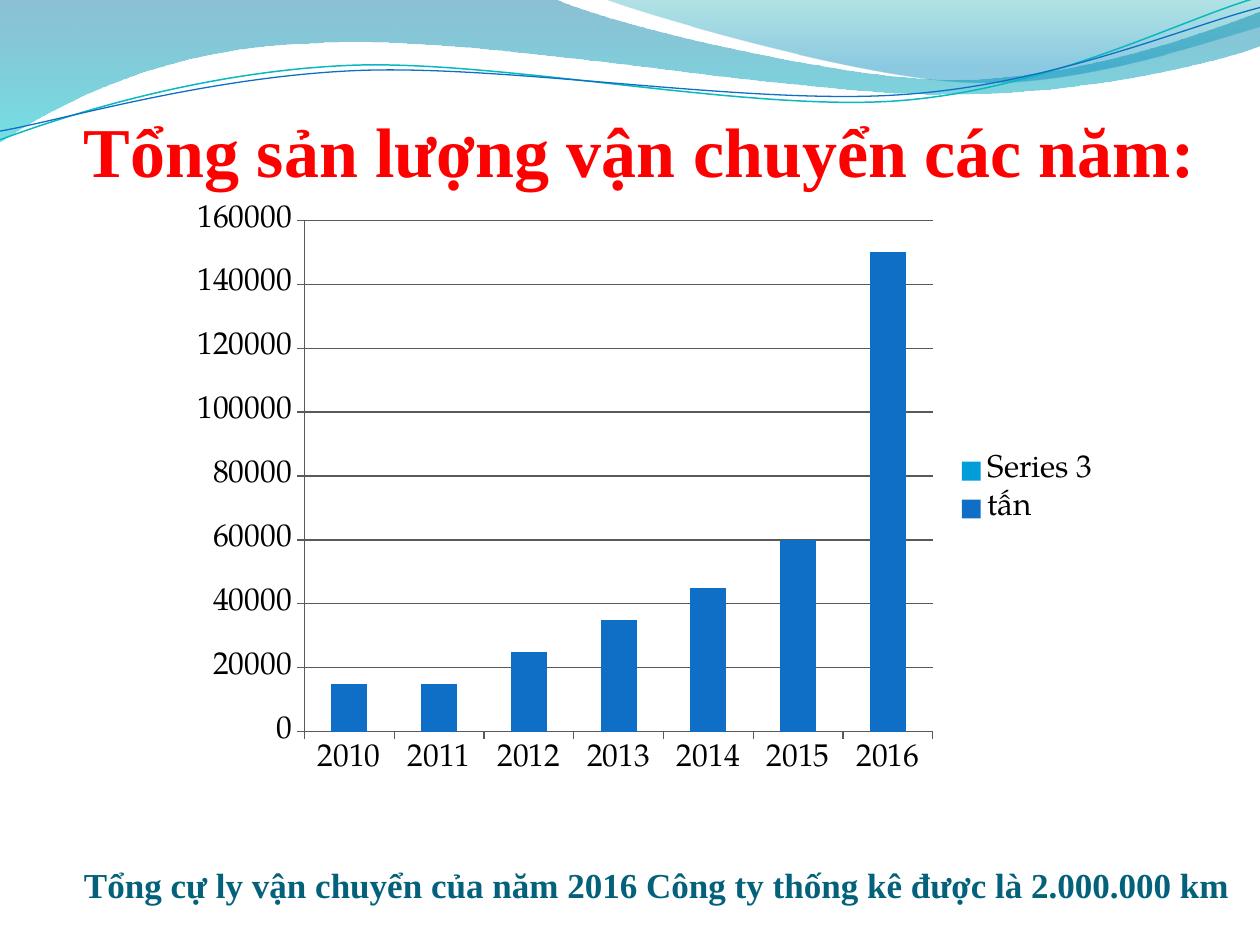
from pptx import Presentation
from pptx.chart.data import CategoryChartData
from pptx.dml.color import RGBColor
from pptx.enum.chart import XL_CHART_TYPE as ChartType, XL_LEGEND_POSITION as LegendPosition, XL_TICK_MARK as TickMark
from pptx.enum.text import MSO_ANCHOR as Anchor, MSO_AUTO_SIZE as AutoSize, PP_ALIGN as Align
from pptx.oxml import parse_xml
from pptx.oxml.ns import nsdecls, qn
from pptx.util import Pt

COLORS = {
    "title": "FF0000", "note": "04617B", "text": "000000", "grid": "595959",
    "tons": "0F6FC6", "other": "009DD9", "teal_line": "0AB8BF", "blue_line": "0F6FC6",
    "back_top": "0074A1", "back_bottom": "00C6CF", "front_top": "00A1A9", "front_bottom": "008BBF",
}
TITLE_FONT = "Times New Roman"
CHART_FONT = "TeX Gyre Pagella"

BACK_WAVE = [
    (0, 0), (316.8, -0.7), (342.7, 12.2, 478.1, 45.4, 545.8, 45.4),
    (614.2, 45.4, 689.8, 18.7, 720, 6.5), (720.7, 25.9),
    (707.8, 31.7, 626.4, 54.7, 537.1, 54), (447.8, 54, 275, 20.2, 185, 24.5),
    (92.9, 25.9, 33.1, 59.8, -0.7, 81.4),
]
FRONT_WAVE = [
    (344.9, -0.7), (366.5, 7.9, 491, 44.6, 553.7, 46.8),
    (616.3, 49.7, 691.9, 23, 720, 15.1), (720, 0),
]
TEAL_CURVE = [
    (0, 79.9), (34.6, 67, 113.8, 41, 199.4, 37.4),
    (284.4, 33.8, 427, 64.1, 513.4, 57.6), (599.8, 51.1, 675.4, 10.8, 718.6, -1.4),
]
BLUE_CURVE = [
    (0, 74.9), (33.8, 69.1, 118.1, 43.9, 203.8, 40.3),
    (290.2, 36.7, 429.8, 60.5, 516.2, 54), (601.9, 48.2, 677.5, 15.1, 720, 4.3),
]


def rgb(name):
    """Return the named colour."""
    return RGBColor.from_string(COLORS[name])


def add_outline(slide, segments, closed):
    """Add a freeform of straight (two numbers) and cubic (six numbers) segments."""
    points = [tuple(map(Pt, segment[-2:])) for segment in segments]
    builder = slide.shapes.build_freeform(*points[0])
    builder.add_line_segments(points[1:], close=closed)
    shape = builder.convert_to_shape()
    shape.shadow.inherit = False
    lines = list(shape.element.iter(qn("a:lnTo")))
    for line, segment in zip(lines, segments[1:]):
        if len(segment) == 6:
            corners = "".join(
                f'<a:pt x="{Pt(x) - shape.left}" y="{Pt(y) - shape.top}"/>'
                for x, y in zip(segment[::2], segment[1::2])
            )
            curve = parse_xml(f'<a:cubicBezTo {nsdecls("a")}>{corners}</a:cubicBezTo>')
            line.getparent().replace(line, curve)
    return shape


def add_wave(slide, segments, stops):
    """Add a wave with a translucent vertical gradient of (position, colour, opacity) stops."""
    shape = add_outline(slide, segments, True)
    shape.line.fill.background()
    stop_xml = "".join(
        f'<a:gs pos="{position * 1000}"><a:srgbClr val="{COLORS[color]}">'
        f'<a:alpha val="{opacity * 1000}"/></a:srgbClr></a:gs>'
        for position, color, opacity in stops
    )
    gradient = parse_xml(
        f'<a:gradFill {nsdecls("a")}><a:gsLst>{stop_xml}</a:gsLst>'
        '<a:lin ang="5400000" scaled="0"/></a:gradFill>'
    )
    shape.element.spPr.find(qn("a:custGeom")).addnext(gradient)


def add_curve(slide, segments, color, width):
    """Add an open curved line."""
    shape = add_outline(slide, segments, False)
    shape.fill.background()
    shape.line.color.rgb = rgb(color)
    shape.line.width = Pt(width)


def write_text(shape, box, text, size, color):
    """Place a shape and give it one bold bottom-anchored line of text."""
    shape.left, shape.top, shape.width, shape.height = map(Pt, box)
    frame = shape.text_frame
    frame.text = text
    frame.word_wrap = True
    frame.auto_size = AutoSize.NONE
    frame.vertical_anchor = Anchor.BOTTOM
    frame.margin_left = frame.margin_right = frame.margin_bottom = 0
    frame.margin_top = Pt(3.6)
    paragraph = frame.paragraphs[0]
    paragraph.alignment = Align.LEFT
    font = paragraph.font
    font.name, font.size, font.bold = TITLE_FONT, Pt(size), True
    font.color.rgb = rgb(color)


def add_tonnage_chart(slide):
    """Add the stacked column chart of yearly tonnage."""
    data = CategoryChartData()
    data.categories = [str(year) for year in range(2010, 2017)]
    data.add_series("tấn", (15000, 15000, 25000, 35000, 45000, 60000, 150000))
    data.add_series("Series 3", (0, 0, 0, 0, None, None, None))
    box = map(Pt, (102.2, 110.2, 534.2, 339.8))
    chart = slide.shapes.add_chart(ChartType.COLUMN_STACKED, *box, data).chart
    chart.has_title = False
    chart.font.name, chart.font.size = CHART_FONT, Pt(18)
    chart.font.color.rgb = rgb("text")
    chart.has_legend = True
    chart.legend.position = LegendPosition.RIGHT
    chart.legend.include_in_layout = False
    plot = chart.plots[0]
    plot.gap_width, plot.overlap, plot.vary_by_categories = 150, 100, False
    for series, color in zip(plot.series, ("tons", "other")):
        series.format.fill.solid()
        series.format.fill.fore_color.rgb = rgb(color)
    chart.value_axis.has_major_gridlines = True
    for axis in (chart.category_axis, chart.value_axis):
        axis.major_tick_mark = TickMark.OUTSIDE
        axis.minor_tick_mark = TickMark.NONE
    for item in (chart.category_axis, chart.value_axis, chart.value_axis.major_gridlines):
        item.format.line.color.rgb = rgb("grid")
        item.format.line.width = Pt(0.75)


def main():
    """Build and save the slide."""
    presentation = Presentation()
    presentation.slide_width, presentation.slide_height = Pt(720), Pt(540)
    slide = presentation.slides.add_slide(presentation.slide_layouts[5])
    add_wave(slide, BACK_WAVE, [(0, "back_top", 45), (100, "back_bottom", 55)])
    add_wave(slide, FRONT_WAVE, [(0, "front_top", 30), (80, "front_bottom", 45)])
    add_curve(slide, TEAL_CURVE, "teal_line", 0.85)
    add_curve(slide, BLUE_CURVE, "blue_line", 0.75)
    title = slide.shapes.title
    title.element.getparent().append(title.element)
    write_text(title, (48, 54, 648, 55.4), "Tổng sản lượng vận chuyển các năm:", 40, "title")
    add_tonnage_chart(slide)
    note_box = (48, 462.2, 668.9, 55.4)
    note = slide.shapes.add_textbox(*map(Pt, note_box))
    write_text(note, note_box, "Tổng cự ly vận chuyển của năm 2016 Công ty thống kê được là 2.000.000 km", 20, "note")
    presentation.save("out.pptx")


if __name__ == "__main__":
    main()
